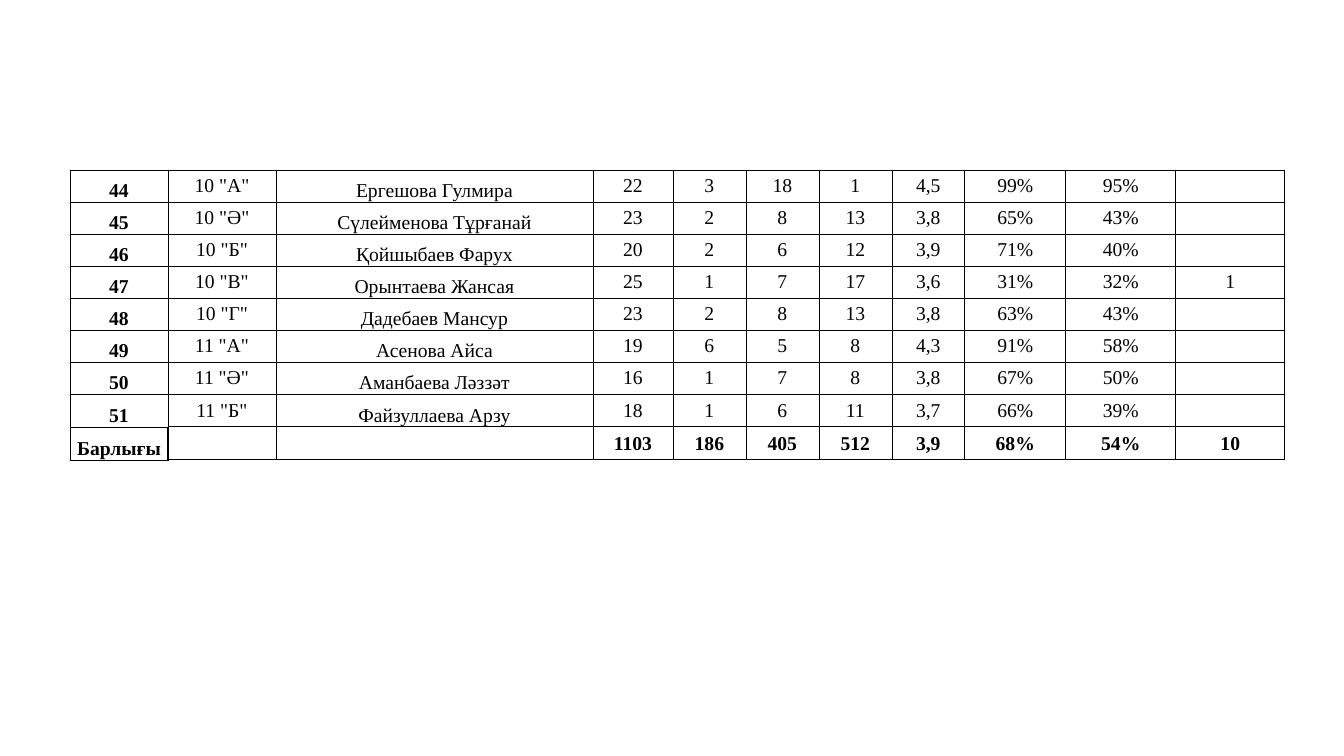
from lxml import etree
from pptx import Presentation
from pptx.dml.color import RGBColor
from pptx.enum.text import MSO_ANCHOR, PP_ALIGN
from pptx.oxml.ns import qn
from pptx.util import Pt

CENTER = PP_ALIGN.CENTER
MIDDLE, BOTTOM = MSO_ANCHOR.MIDDLE, MSO_ANCHOR.BOTTOM
WIDE, HIGH = 1344, 756
SCALE = 12192000 / WIDE

# Number, class, teacher, then the marks of each class
ROWS = [
    ["44", '10 "А"', "Ергешова Гулмира", "22", "3", "18", "1", "4,5", "99%", "95%", ""],
    ["45", '10 "Ә"', "Сүлейменова Тұрғанай", "23", "2", "8", "13", "3,8", "65%", "43%", ""],
    ["46", '10 "Б"', "Қойшыбаев Фарух", "20", "2", "6", "12", "3,9", "71%", "40%", ""],
    ["47", '10 "В"', "Орынтаева Жансая", "25", "1", "7", "17", "3,6", "31%", "32%", "1"],
    ["48", '10 "Г"', "Дадебаев Мансур", "23", "2", "8", "13", "3,8", "63%", "43%", ""],
    ["49", '11 "А"', "Асенова Айса", "19", "6", "5", "8", "4,3", "91%", "58%", ""],
    ["50", '11 "Ә"', "Аманбаева Ләззәт", "16", "1", "7", "8", "3,8", "67%", "50%", ""],
    ["51", '11 "Б"', "Файзуллаева Арзу", "18", "1", "6", "11", "3,7", "66%", "39%", ""],
    ["Барлығы", "", "", "1103", "186", "405", "512", "3,9", "68%", "54%", "10"],
]
COLS = [98, 108, 317, 80] + [73] * 4 + [101, 110, 109]
TALL = [32] * 7 + [33] * 2
LAST = len(ROWS) - 1


def px(num):
    return round(num * SCALE)


def color(code):
    return RGBColor.from_string(code)


class Page:
    font, size = "Times New Roman", 14
    ink, back = "000000", "FFFFFF"
    thin, thick = 0.5, 1

    def __init__(self, slide):
        self.slide = slide

    def table(self, left, top, cols, tall, rows):
        frame = self.slide.shapes.add_table(
            len(rows), len(cols), px(left), px(top), px(sum(cols)), px(sum(tall)))
        grid = frame.table
        grid.first_row = grid.horz_banding = False
        for col, wide in zip(grid.columns, cols):
            col.width = px(wide)
        for row, high in zip(grid.rows, tall):
            row.height = px(high)
        for r, row in enumerate(rows):
            for c, text in enumerate(row):
                self.cell(grid.cell(r, c), r, c, text)

    def cell(self, cell, r, c, text):
        self.edges(cell, r, c)
        cell.fill.solid()
        cell.fill.fore_color.rgb = color(self.back)
        pad = px(1) if c == 0 else 0
        cell.margin_left = cell.margin_right = cell.margin_top = pad
        cell.margin_bottom = 0
        cell.vertical_anchor = BOTTOM if c in (0, 2) else MIDDLE
        if text:
            self.text(cell, text, c == 0 or r == LAST)

    def text(self, cell, text, bold):
        para = cell.text_frame.paragraphs[0]
        para.alignment = CENTER
        run = para.add_run()
        run.text = text
        run.font.name, run.font.size = self.font, Pt(self.size)
        run.font.bold = bold
        run.font.color.rgb = color(self.ink)

    def edges(self, cell, r, c):
        # The total row is boxed by a heavier line, past its label
        total = r == LAST
        heavy = {
            "lnL": total and c == 1,
            "lnR": total and c == 0,
            "lnT": total and c > 0,
            "lnB": r >= LAST - 1 and c > 0,
        }
        props = cell._tc.get_or_add_tcPr()
        for tag, bold in heavy.items():
            width = Pt(self.thick if bold else self.thin)
            line = etree.SubElement(props, qn("a:" + tag), w=str(width))
            fill = etree.SubElement(line, qn("a:solidFill"))
            etree.SubElement(fill, qn("a:srgbClr"), val=self.ink)


def main():
    deck = Presentation()
    deck.slide_width, deck.slide_height = px(WIDE), px(HIGH)
    page = Page(deck.slides.add_slide(deck.slide_layouts[6]))

    # Class results with the total row
    page.table(70, 170, COLS, TALL, ROWS)
    deck.save("out.pptx")


if __name__ == "__main__":
    main()
